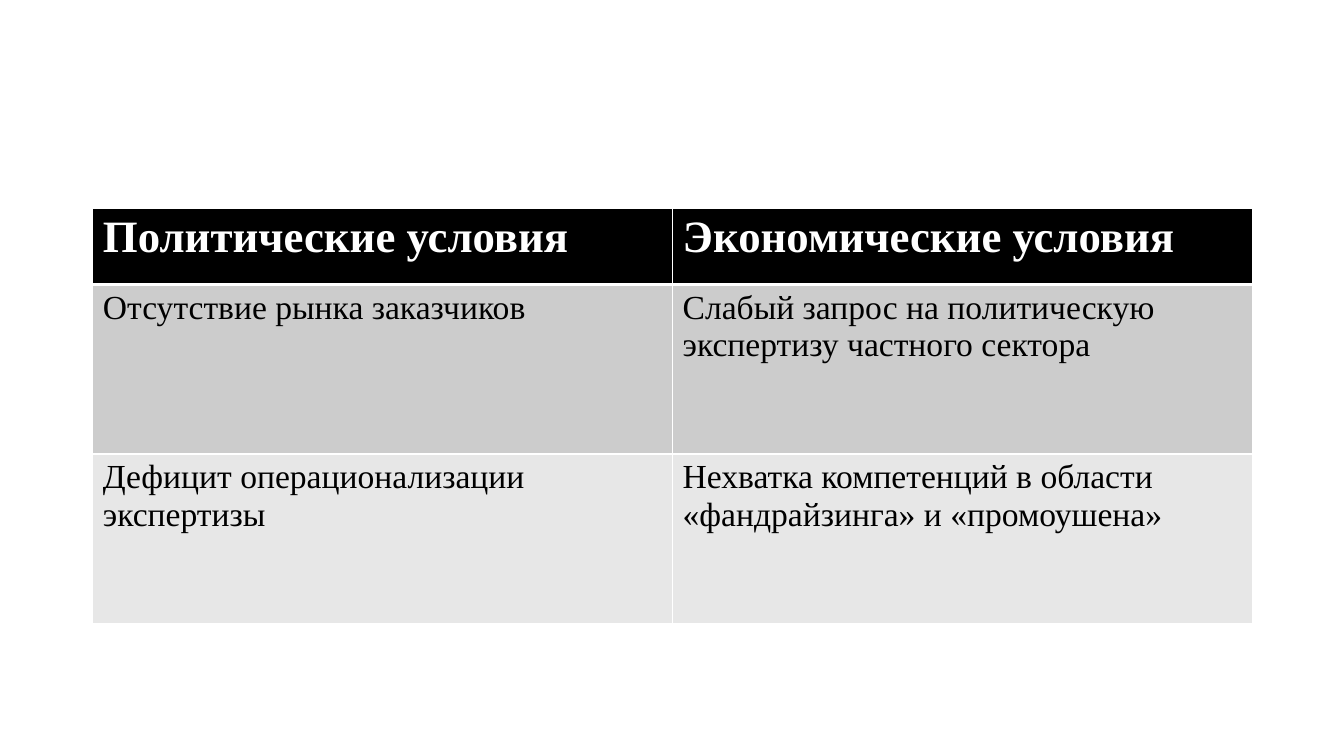
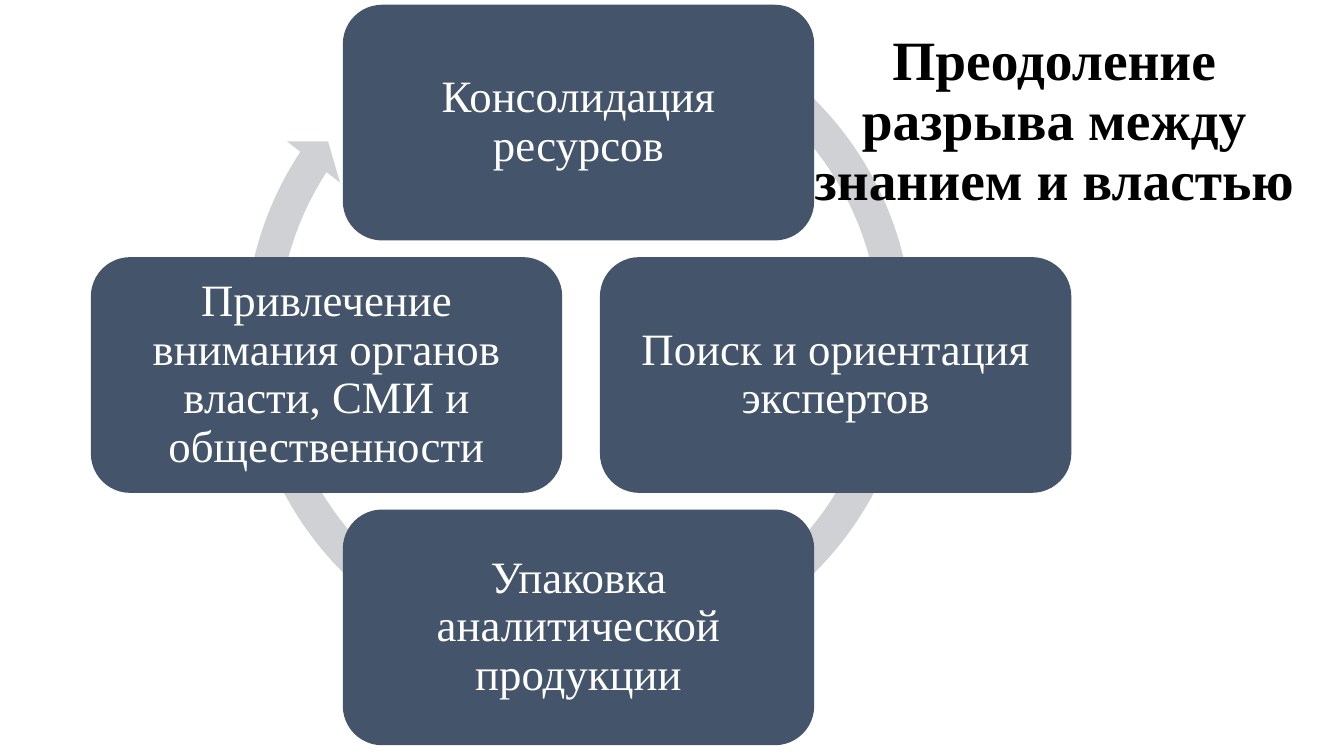
import pptx
import pptx.dml.color
import pptx.enum.shapes
import pptx.enum.text
import pptx.oxml
import pptx.oxml.ns
import pptx.util

Cm, Pt = pptx.util.Cm, pptx.util.Pt
RGB = pptx.dml.color.RGBColor.from_string
Shape = pptx.enum.shapes.MSO_SHAPE
Align = pptx.enum.text.PP_ALIGN
Anchor = pptx.enum.text.MSO_ANCHOR

FONT = "Times New Roman"
COLORS = {
    "white": "FFFFFF",
    "black": "000000",
    "dark": "CCCCCC",
    "light": "E7E7E7",
    "node": "44546A",
    "ring": "CFD1D4",
}

ROWS = [
    ("Политические условия", "Экономические условия"),
    ("Отсутствие рынка заказчиков",
     "Слабый запрос на политическую экспертизу частного сектора"),
    ("Дефицит операционализации экспертизы",
     "Нехватка компетенций в области «фандрайзинга» и «промоушена»"),
]

# Cycle steps: text and centre offset from the middle of the ring
STEPS = [
    ("Консолидация ресурсов", 0, -6.36),
    ("Поиск и ориентация экспертов", 6.48, 0),
    ("Упаковка аналитической продукции", 0, 6.36),
    ("Привлечение внимания органов власти, СМИ и общественности", -6.35, 0),
]
MID_X, MID_Y = 14.58, 9.45
NODE_W, NODE_H = 11.88, 5.94


def write(frame, text, size=32, color="white", bold=False,
          align=Align.LEFT, space=1.0):
    """Put formatted text into a text frame."""
    frame.word_wrap = True
    para = frame.paragraphs[0]
    para.text = text
    para.alignment = align
    para.line_spacing = space
    for run in para.runs:
        font = run.font
        font.name, font.size, font.bold = FONT, Pt(size), bold
        font.color.rgb = RGB(COLORS[color])


def draw(slide, kind, left, top, width, height, color):
    """Add a flat preset shape."""
    shape = slide.shapes.add_shape(
        kind, Cm(left), Cm(top), Cm(width), Cm(height))
    shape.shadow.inherit = False
    shape.fill.solid()
    shape.fill.fore_color.rgb = RGB(COLORS[color])
    shape.line.fill.background()
    return shape


def edge(cell, **widths):
    """Draw white cell borders, given in points per side."""
    props = cell._tc.get_or_add_tcPr()
    for side in "LRTB":
        props.append(pptx.oxml.parse_xml(
            f'<a:ln{side} {pptx.oxml.ns.nsdecls("a")} '
            f'w="{Pt(widths.get(side, 1))}"><a:solidFill>'
            f'<a:srgbClr val="{COLORS["white"]}"/>'
            f'</a:solidFill></a:ln{side}>'))


def grid(slide):
    """Add the table of conditions."""
    table = slide.shapes.add_table(
        3, 2, Cm(2.34), Cm(5.24), Cm(29.22), Cm(10.47)).table
    for col in table.columns:
        col.width = Cm(14.61)
    styles = [
        (1.93, "black", {"size": 32, "bold": True}, {"B": 3}),
        (4.27, "dark", {"size": 24, "color": "black"}, {"T": 3}),
        (4.27, "light", {"size": 24, "color": "black"}, {}),
    ]
    for row, texts, style in zip(table.rows, ROWS, styles):
        height, fill, form, sides = style
        row.height = Cm(height)
        for cell, text in zip(row.cells, texts):
            edge(cell, **sides)
            cell.fill.solid()
            cell.fill.fore_color.rgb = RGB(COLORS[fill])
            write(cell.text_frame, text, **form)


def ring(slide):
    """Add the circular arrow behind the steps."""
    arrow = draw(slide, Shape.CIRCULAR_ARROW, 5.74, -0.38, 17.7, 17.7, "ring")
    turn = 0.6  # adjustment units per degree
    values = (4.7 / 100, 4.55 * turn, 213.26 * turn, 300.92 * turn, 4.8 / 100)
    for pos, value in enumerate(values):
        arrow.adjustments[pos] = value


def node(slide, text, dx, dy):
    """Add one step of the cycle."""
    shape = draw(slide, Shape.ROUNDED_RECTANGLE,
                 MID_X + dx - NODE_W / 2, MID_Y + dy - NODE_H / 2,
                 NODE_W, NODE_H, "node")
    frame = shape.text_frame
    frame.margin_left = frame.margin_right = Cm(0.33)
    frame.margin_top = frame.margin_bottom = Cm(0.33)
    frame.vertical_anchor = Anchor.MIDDLE
    write(frame, text, align=Align.CENTER, space=0.9)


def title(slide, text):
    """Add the slide title."""
    box = slide.shapes.add_textbox(Cm(19.28), Cm(0.84), Cm(14.58), Cm(4.5))
    box.text_frame.vertical_anchor = Anchor.MIDDLE
    write(box.text_frame, text, size=39.6, color="black", bold=True,
          align=Align.CENTER, space=0.9)


def main():
    deck = pptx.Presentation()
    deck.slide_width, deck.slide_height = Cm(33.87), Cm(19.05)
    blank = deck.slide_layouts[6]

    # Conditions
    grid(deck.slides.add_slide(blank))

    # Cycle
    cycle = deck.slides.add_slide(blank)
    ring(cycle)
    for step in STEPS:
        node(cycle, *step)
    title(cycle, "Преодоление\nразрыва между знанием и властью")

    deck.save("out.pptx")


if __name__ == "__main__":
    main()
